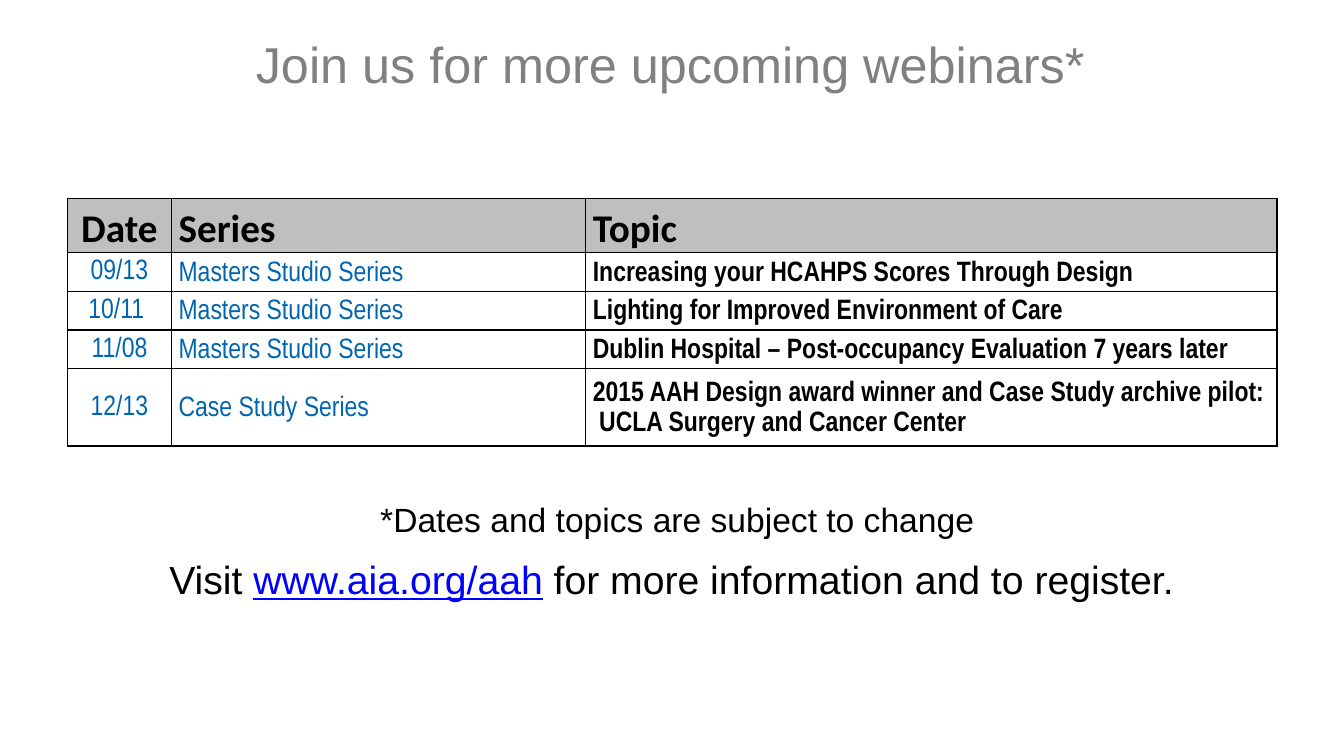
from lxml.etree import SubElement
from pptx import Presentation
from pptx.dml.color import RGBColor as Color
from pptx.enum.text import MSO_ANCHOR as Anchor, PP_ALIGN as Align
from pptx.oxml.ns import qn
from pptx.util import Cm, Pt

COLORS = {"black": "000000", "title": "808080", "blue": "0065B0",
          "link": "0000FF", "header": "BFBFBF"}
TITLE = "Join us for more upcoming webinars* "
NOTE = "*Dates and topics are subject to change"
VISIT = [("Visit ", "black"), ("www.aia.org/aah", "link"),
         (" for more information and to register. ", "black")]
HEADER = ("Date", "Series", "Topic")
WEBINARS = [
    ("09/13", "Masters Studio Series", "Increasing your HCAHPS Scores Through Design"),
    ("10/11 ", "Masters Studio Series", "Lighting for Improved Environment of Care"),
    ("11/08", "Masters Studio Series",
     "Dublin Hospital – Post-occupancy Evaluation 7 years later"),
    ("12/13", "Case Study Series",
     "2015 AAH Design award winner and Case Study archive pilot:\v UCLA Surgery and Cancer Center"),
]
COLUMN_WIDTHS = (2.62, 10.44, 17.42)
HEADER_HEIGHT, ROW_HEIGHT = 1.27, 0.48


def add_span(para, text, font, size, color, bold=False):
    for index, line in enumerate(text.split("\v")):
        if index:
            para.add_line_break()
        span = para.add_run()
        span.text = line
        span.font.name = font
        span.font.size = Pt(size)
        span.font.bold = bold
        span.font.color.rgb = Color.from_string(COLORS[color])
        span.font.underline = color == "link"


def add_line(page, place, spans, size):
    box = page.shapes.add_textbox(*map(Cm, place))
    box.text_frame.word_wrap = True
    para = box.text_frame.paragraphs[0]
    para.alignment = Align.CENTER
    for text, color in spans:
        add_span(para, text, "Arial", size, color)


def add_borders(cell):
    properties = cell._tc.get_or_add_tcPr()
    for index, side in enumerate(("lnL", "lnR", "lnT", "lnB")):
        line = SubElement(properties, qn(f"a:{side}"), w=str(Pt(1)))
        fill = SubElement(line, qn("a:solidFill"))
        SubElement(fill, qn("a:srgbClr"), val=COLORS["black"])
        properties.remove(line)
        properties.insert(index, line)


def fill_cell(cell, text, row, column):
    is_header, is_date = row == 0, column == 0
    cell.margin_left = cell.margin_right = Cm(0.03 if is_date and not is_header else 0.18)
    cell.margin_top = Cm(0.03 if is_date and not is_header else 0)
    cell.margin_bottom = 0
    cell.vertical_anchor = Anchor.TOP if is_header else Anchor.MIDDLE
    para = cell.text_frame.paragraphs[0]
    para.alignment = Align.CENTER if is_date else Align.LEFT
    if is_header or not is_date:
        para.line_spacing = 1.15
    if is_header:
        add_span(para, text, "Calibri", 28, "black", True)
        cell.fill.solid()
        cell.fill.fore_color.rgb = Color.from_string(COLORS["header"])
    else:
        is_topic = column == 2
        add_span(para, text, "Arial Narrow", 20, "black" if is_topic else "blue", is_topic)
        cell.fill.background()
    add_borders(cell)


def add_schedule(page):
    rows = [HEADER] + WEBINARS
    height = HEADER_HEIGHT + ROW_HEIGHT * len(WEBINARS)
    table = page.shapes.add_table(len(rows), len(HEADER), Cm(1.7), Cm(5),
                                  Cm(sum(COLUMN_WIDTHS)), Cm(height)).table
    table.horz_banding = False
    for column, width in zip(table.columns, COLUMN_WIDTHS):
        column.width = Cm(width)
    for row, texts in enumerate(rows):
        table.rows[row].height = Cm(ROW_HEIGHT if row else HEADER_HEIGHT)
        for column, text in enumerate(texts):
            fill_cell(table.cell(row, column), text, row, column)


def main():
    deck = Presentation()
    deck.slide_width, deck.slide_height = Cm(33.87), Cm(19.05)
    page = deck.slides.add_slide(deck.slide_layouts[5])
    title = page.shapes.title
    title.left, title.top, title.width, title.height = map(Cm, (1.83, 0, 30.48, 3.18))
    title.text_frame.vertical_anchor = Anchor.MIDDLE
    para = title.text_frame.paragraphs[0]
    para.alignment = Align.CENTER
    add_span(para, TITLE, "Arial", 36, "title")
    add_line(page, (3.38, 13.87, 27.36, 1.52), VISIT, 28)
    add_schedule(page)
    add_line(page, (7.44, 12.45, 19.25, 1.27), [(NOTE, "black")], 24)
    deck.save("out.pptx")


if __name__ == "__main__":
    main()
